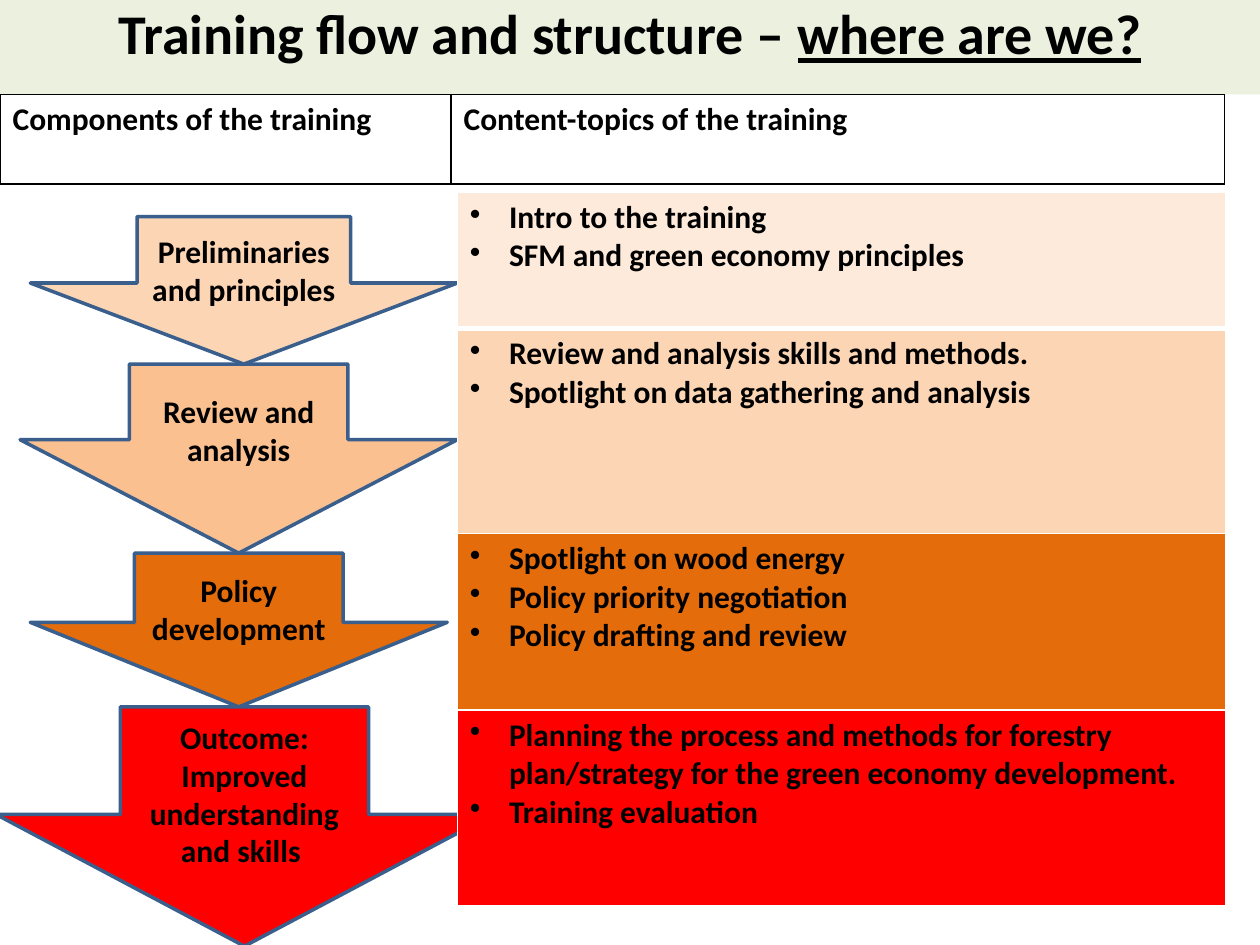
"""Build the training flow slide: stage arrows beside a table of topics."""
from dataclasses import dataclass

from lxml.etree import SubElement
from pptx import Presentation
from pptx.dml.color import RGBColor as Rgb
from pptx.enum.shapes import MSO_SHAPE as Preset
from pptx.enum.text import MSO_ANCHOR as Anchor, PP_ALIGN as Align
from pptx.oxml import parse_xml
from pptx.oxml.ns import nsdecls, qn
from pptx.util import Emu, Inches, Pt

COLOURS = {
    "ink": "000000", "paper": "FFFFFF", "outline": "3A5F8C", "banner": "EBF1DE",
    "blush": "FDEADA", "peach": "FCD5B5", "apricot": "FAC090",
    "orange": "E46C0A", "red": "FF0000",
}
WIDTH, HEIGHT = Inches(10), Inches(7.5)
COLUMNS, ROWS = 100, 75
FONT = "Calibri"
FLOW_TOP = 17.2
TOPICS_LEFT, TOPICS_TOP, TOPICS_WIDTH = 36.3, 15.25, 61


@dataclass(frozen=True)
class Stage:
    label: str
    left: float
    width: float
    height: float
    head: float
    arrow_colour: str
    topics: tuple[str, ...]
    row_height: float
    row_colour: str
    rule: float = 1


STAGES = (
    Stage("Preliminaries and principles", 2.4, 33.9, 11.7, 0.55, "peach",
          ("Intro to the training", "SFM and green economy principles"),
          10.8, "blush", rule=3),
    Stage("Review and analysis", 1.6, 34.7, 15, 0.6, "apricot",
          ("Review and analysis skills and methods.",
           "Spotlight on data gathering and analysis"), 16.3, "peach"),
    Stage("Policy development", 2.4, 33.1, 12.2, 0.55, "orange",
          ("Spotlight on wood energy", "Policy priority negotiation",
           "Policy drafting and review"), 14, "orange"),
    Stage("Outcome: Improved understanding and skills ", -0.3, 39.4, 19, 0.55, "red",
          ("Planning the process and methods for forestry plan/strategy "
           "for the green economy development.", "Training evaluation"),
          15.5, "red"),
)
HEADINGS = {"Components of the training": 35.8, "Content-topics of the training": 61.4}


def across(columns: float) -> Emu:
    """Turn grid columns into a length."""
    return Emu(round(WIDTH * columns / COLUMNS))


def down(rows: float) -> Emu:
    """Turn grid rows into a length."""
    return Emu(round(HEIGHT * rows / ROWS))


def area(left: float, top: float, width: float, height: float) -> tuple[Emu, ...]:
    """Turn a grid rectangle into lengths."""
    return across(left), down(top), across(width), down(height)


def paint(fill, colour: str) -> None:
    """Make a fill solid."""
    fill.solid()
    fill.fore_color.rgb = Rgb.from_string(COLOURS[colour])


def style(para, size: float = 18, align: Align = Align.LEFT) -> None:
    """Set the bold black type of a paragraph."""
    para.alignment = align
    para.font.name, para.font.size, para.font.bold = FONT, Pt(size), True
    para.font.color.rgb = Rgb.from_string(COLOURS["ink"])


def add_bullet(para) -> None:
    """Give a paragraph a hanging bullet."""
    props = para._p.get_or_add_pPr()
    props.set("marL", str(Inches(0.31)))
    props.set("indent", str(-Inches(0.31)))
    props.insert(0, parse_xml(f'<a:buChar {nsdecls("a")} char="•"/>'))


def add_borders(cell, colour: str, bottom: float = 1) -> None:
    """Rule the four sides of a cell."""
    props = cell._tc.get_or_add_tcPr()
    for index, (side, points) in enumerate(zip("LRTB", (1, 1, 1, bottom))):
        line = props.makeelement(qn(f"a:ln{side}"), {"w": str(Pt(points))})
        fill = SubElement(line, qn("a:solidFill"))
        SubElement(fill, qn("a:srgbClr"), val=COLOURS[colour])
        props.insert(index, line)


def add_grid(page, left: float, top: float, widths: list[float], heights: list[float]):
    """Add a table without banding."""
    place = area(left, top, sum(widths), sum(heights))
    table = page.shapes.add_table(len(heights), len(widths), *place).table
    table.first_row = table.horz_banding = False
    for column, width in zip(table.columns, widths):
        column.width = across(width)
    for row, height in zip(table.rows, heights):
        row.height = down(height)
    return table


def add_arrow(page, stage: Stage, top: float) -> None:
    """Draw the arrow of a stage."""
    box = page.shapes.add_shape(
        Preset.DOWN_ARROW, *area(stage.left, top, stage.width, stage.height))
    box.shadow.inherit = False
    box.adjustments[0], box.adjustments[1] = 0.5, stage.head
    paint(box.fill, stage.arrow_colour)
    paint(box.line.fill, "outline")
    box.line.width = Pt(2)
    box.text_frame.word_wrap = True
    box.text_frame.vertical_anchor = Anchor.MIDDLE
    box.text_frame.text = stage.label
    style(box.text_frame.paragraphs[0], align=Align.CENTER)


def add_topics(page) -> None:
    """Draw the table of topics, a row for each stage."""
    table = add_grid(page, TOPICS_LEFT, TOPICS_TOP, [TOPICS_WIDTH],
                     [stage.row_height for stage in STAGES])
    for row, stage in enumerate(STAGES):
        cell = table.cell(row, 0)
        cell.text = "\n".join(stage.topics)
        paint(cell.fill, stage.row_colour)
        add_borders(cell, "paper", stage.rule)
        for para in cell.text_frame.paragraphs:
            style(para)
            add_bullet(para)


def add_title(page) -> None:
    """Draw the title banner."""
    box = page.shapes.add_shape(Preset.RECTANGLE, *area(0, -0.6, 100, 8.1))
    box.shadow.inherit = False
    paint(box.fill, "banner")
    box.line.fill.background()
    box.text_frame.word_wrap = True
    box.text_frame.vertical_anchor = Anchor.TOP
    para = box.text_frame.paragraphs[0]
    style(para, 32, Align.CENTER)
    for words, underlined in (("Training flow and structure – ", False),
                              ("where are we?", True)):
        span = para.add_run()
        span.text = words
        span.font.underline = underlined


def add_headings(page) -> None:
    """Draw the row of column headings."""
    table = add_grid(page, 0, 7.5, list(HEADINGS.values()), [7.1])
    for column, heading in enumerate(HEADINGS):
        cell = table.cell(0, column)
        cell.text = heading
        paint(cell.fill, "paper")
        add_borders(cell, "ink")
        style(cell.text_frame.paragraphs[0])


def main() -> None:
    """Build and save the deck."""
    deck = Presentation()
    deck.slide_width, deck.slide_height = WIDTH, HEIGHT
    page = deck.slides.add_slide(deck.slide_layouts[6])
    top = FLOW_TOP
    for stage in STAGES:
        add_arrow(page, stage, top)
        top += stage.height
    add_topics(page)
    add_title(page)
    add_headings(page)
    deck.save("out.pptx")


if __name__ == "__main__":
    main()
